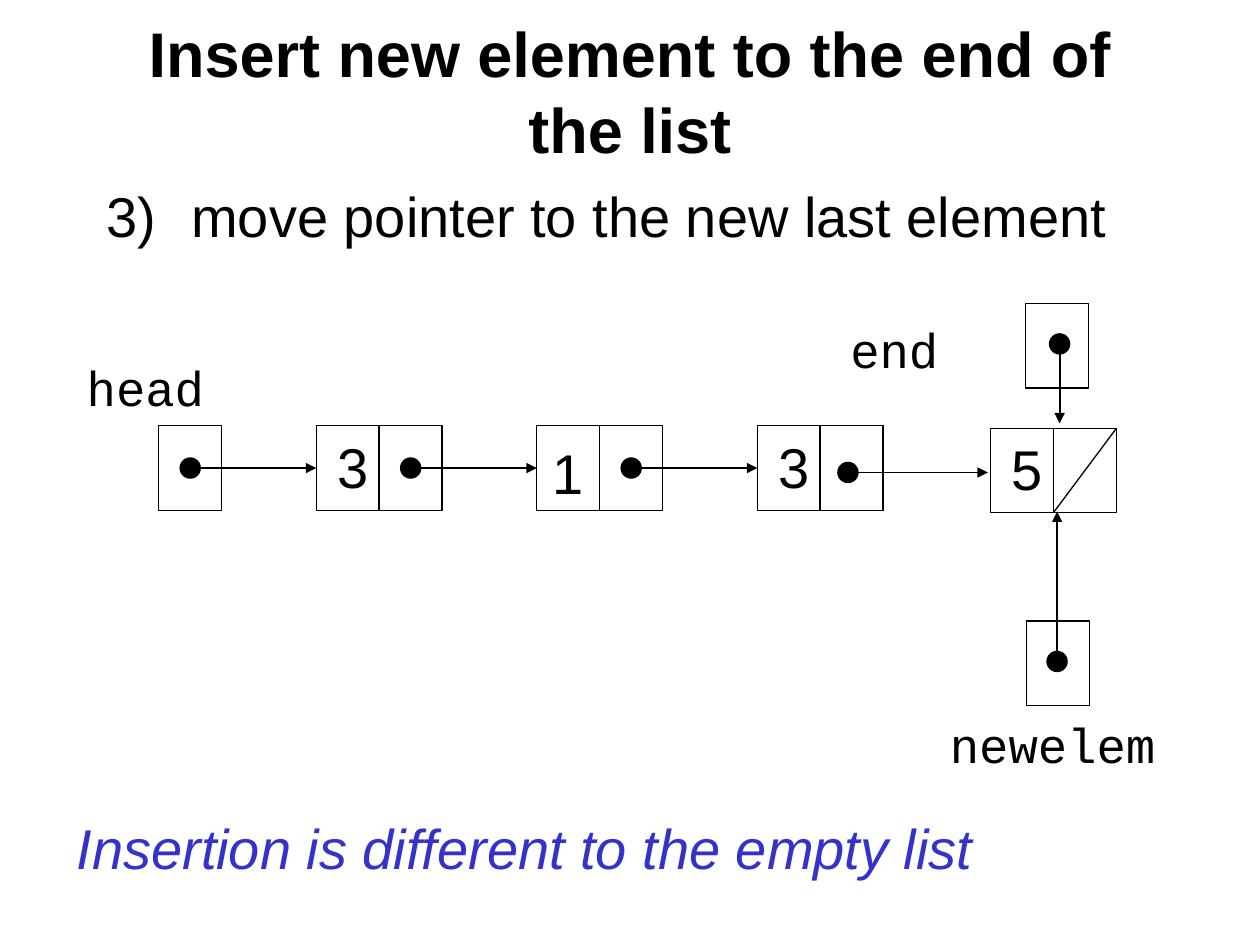
from dataclasses import dataclass

from lxml import etree
from pptx import Presentation, util as u
from pptx.dml.color import RGBColor
from pptx.enum import shapes, text
from pptx.oxml import ns


@dataclass(frozen=True)
class Theme:
    ink: RGBColor = RGBColor(0x00, 0x00, 0x00)
    accent: RGBColor = RGBColor(0x33, 0x33, 0xCC)
    sans: str = "Arial"
    mono: str = "Courier New"
    title_size: int = 36
    body_size: int = 32
    label_size: int = 28
    outline: float = 0.75
    arrow: float = 1


THEME = Theme()
CELL_WIDTH, CELL_HEIGHT = 0.5, 0.67
DOT = 0.16
ROW_TOP = 3.38
ROW_MIDDLE = ROW_TOP + CELL_HEIGHT / 2
HEAD_LEFT = 1.26
FIRST_NODE, NODE_STEP = 2.51, 1.75
NEW_LEFT, NEW_TOP = 7.86, 3.4


def add_text(slide, content, left, top, width, height, size=THEME.body_size,
             font=THEME.sans, color=THEME.ink, bold=False, italic=False,
             align=text.PP_ALIGN.LEFT, anchor=text.MSO_ANCHOR.TOP, wrap=False):
    box = slide.shapes.add_textbox(*map(u.Inches, (left, top, width, height)))
    frame = box.text_frame
    frame.word_wrap = wrap
    frame.vertical_anchor = anchor
    paragraph = frame.paragraphs[0]
    paragraph.alignment = align
    run = paragraph.add_run()
    run.text = content
    run.font.name = font
    run.font.size = u.Pt(size)
    run.font.color.rgb = color
    run.font.bold = bold
    run.font.italic = italic
    return paragraph


def number_paragraph(paragraph, start, indent):
    properties = paragraph._p.get_or_add_pPr()
    properties.set("marL", str(u.Inches(indent)))
    properties.set("indent", str(-u.Inches(indent)))
    etree.SubElement(properties, ns.qn("a:buFont"), typeface=THEME.sans)
    etree.SubElement(properties, ns.qn("a:buAutoNum"),
                     type="arabicParenR", startAt=str(start))


def add_outlined(slide, kind, left, top, width, height):
    shape = slide.shapes.add_shape(kind, *map(u.Inches, (left, top, width, height)))
    shape.shadow.inherit = False
    shape.fill.background()
    shape.line.color.rgb = THEME.ink
    shape.line.width = u.Pt(THEME.outline)
    return shape


def add_cell(slide, left, top):
    return add_outlined(slide, shapes.MSO_SHAPE.RECTANGLE,
                        left, top, CELL_WIDTH, CELL_HEIGHT)


def add_dot(slide, x, y):
    dot = add_outlined(slide, shapes.MSO_SHAPE.OVAL,
                       x - DOT / 2, y - DOT / 2, DOT, DOT)
    dot.fill.solid()
    dot.fill.fore_color.rgb = THEME.ink


def add_line(slide, start, end, width=THEME.outline):
    line = slide.shapes.add_connector(shapes.MSO_CONNECTOR.STRAIGHT,
                                      *map(u.Inches, (*start, *end)))
    line.line.color.rgb = THEME.ink
    line.line.width = u.Pt(width)
    etree.SubElement(line._element.spPr, ns.qn("a:effectLst"))
    return line


def add_pointer(slide, start, end, target=None):
    arrow = add_line(slide, start, end, THEME.arrow)
    etree.SubElement(arrow.line._get_or_add_ln(), ns.qn("a:tailEnd"), type="triangle")
    if target is not None:
        arrow.end_connect(target, 1)
    add_dot(slide, *start)


def add_node(slide, left, top, value, value_left, value_top,
             align=text.PP_ALIGN.CENTER):
    data_cell = add_cell(slide, left, top)
    add_cell(slide, left + CELL_WIDTH, top)
    add_text(slide, value, value_left, value_top, 0.45, 0.63, align=align)
    return data_cell


def add_label(slide, content, left, top, width):
    add_text(slide, content, left, top, width, 0.57,
             size=THEME.label_size, font=THEME.mono)


def add_list(slide):
    add_cell(slide, HEAD_LEFT, ROW_TOP)
    center, middle = text.PP_ALIGN.CENTER, text.PP_ALIGN.LEFT
    values = [("3", 0.07, 0, center), ("1", 0.03, 0.05, middle), ("3", 0.07, 0, center)]
    for index, (value, shift, drop, align) in enumerate(values):
        left = FIRST_NODE + index * NODE_STEP
        data_cell = add_node(slide, left, ROW_TOP, value,
                             left + shift, ROW_TOP + drop, align)
        add_pointer(slide, (left - 1, ROW_MIDDLE), (left, ROW_MIDDLE), data_cell)


def add_new_element(slide):
    add_node(slide, NEW_LEFT, NEW_TOP, "5", 7.93, NEW_TOP)
    add_line(slide, (NEW_LEFT + 2 * CELL_WIDTH, NEW_TOP),
             (NEW_LEFT + CELL_WIDTH, NEW_TOP + CELL_HEIGHT))
    add_cell(slide, 8.14, 2.41)
    add_cell(slide, 8.15, 4.93)
    add_pointer(slide, (8.41, 2.73), (8.41, 3.36))
    add_pointer(slide, (8.39, 5.25), (8.39, 4.06))
    add_pointer(slide, (6.73, 3.75), (7.84, 3.75))


def main():
    presentation = Presentation()
    presentation.slide_width = u.Inches(10)
    presentation.slide_height = u.Inches(7.5)
    slide = presentation.slides.add_slide(presentation.slide_layouts[6])

    add_text(slide, "Insert new element to the end of the list", 0.75, 0.36, 8.5, 0.71,
             size=THEME.title_size, bold=True, align=text.PP_ALIGN.CENTER,
             anchor=text.MSO_ANCHOR.MIDDLE, wrap=True)
    step = add_text(slide, "move pointer to the new last element",
                    0.75, 1.39, 8.5, 1.18, wrap=True)
    number_paragraph(step, start=3, indent=0.67)

    add_list(slide)
    add_new_element(slide)
    add_label(slide, "head", 0.59, 2.79, 1.14)
    add_label(slide, "end", 6.65, 2.49, 0.91)
    add_label(slide, "newelem", 7.44, 5.62, 1.85)

    add_text(slide, "Insertion is different to the empty list", 0.51, 6.41, 8.74, 0.63,
             color=THEME.accent, italic=True, wrap=True)
    presentation.save("out.pptx")


if __name__ == "__main__":
    main()
